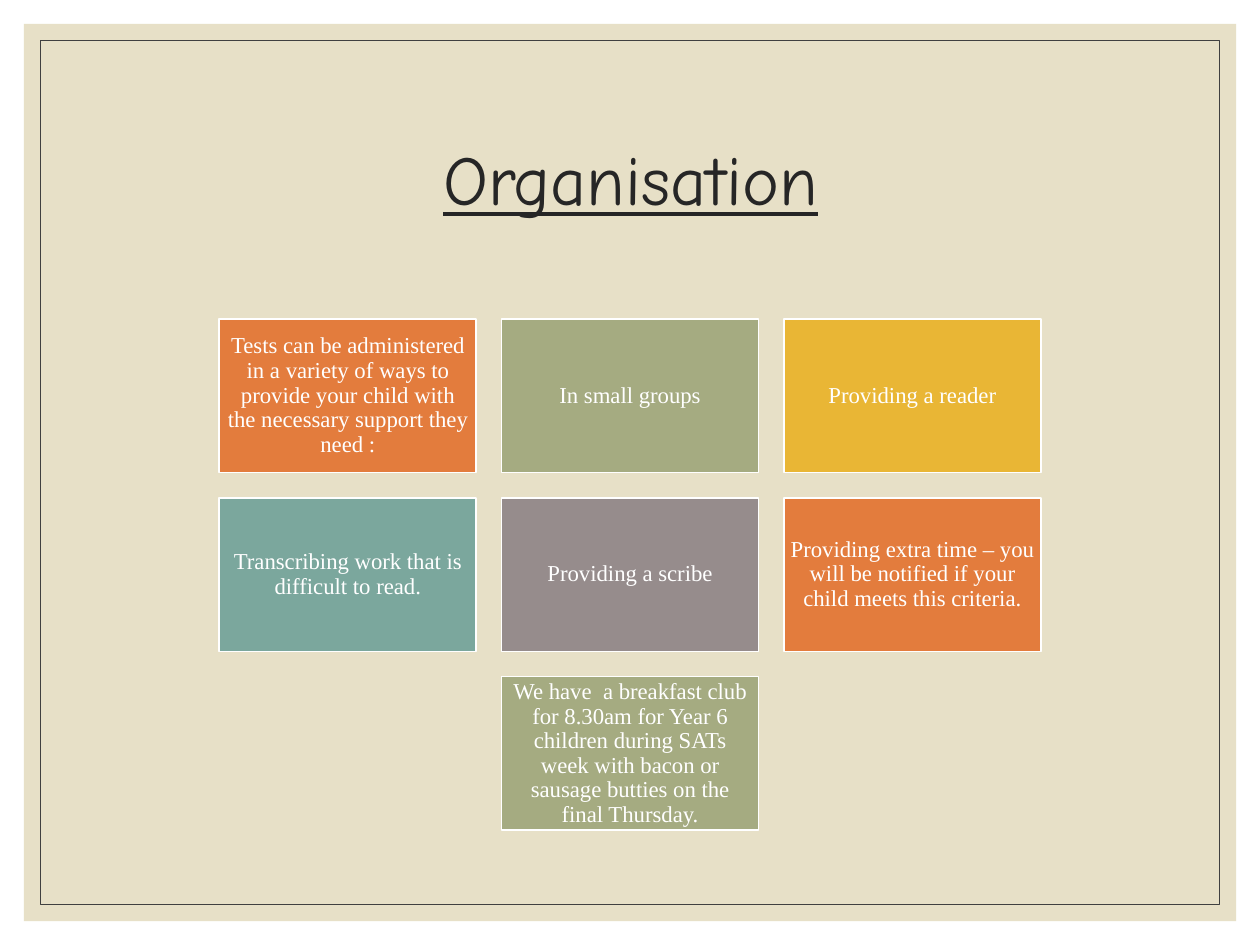
from pptx import Presentation
from pptx.dml.color import RGBColor
from pptx.enum.shapes import MSO_SHAPE
from pptx.enum.text import MSO_ANCHOR, PP_ALIGN
from pptx.util import Inches, Pt


def add_box(left, top, width, height, fill=None, line=None, line_width=1):
    sp = s.shapes.add_shape(MSO_SHAPE.RECTANGLE, Inches(left), Inches(top),
                            Inches(width), Inches(height))
    sp.shadow.inherit = False
    for fmt, color in ((sp.fill, fill), (sp.line.fill, line)):
        if color:
            fmt.solid()
            fmt.fore_color.rgb = RGBColor.from_string(color)
        else:
            fmt.background()
    if line:
        sp.line.width = Pt(line_width)
    return sp


def set_text(sp, text, color, margin, **font):
    """Write one centred paragraph; extra keywords are font attributes."""
    tf = sp.text_frame
    frame = {"word_wrap": True, "vertical_anchor": MSO_ANCHOR.MIDDLE}
    for side in ("left", "right", "top", "bottom"):
        frame[f"margin_{side}"] = Inches(margin)
    for name, value in frame.items():
        setattr(tf, name, value)
    p = tf.paragraphs[0]
    p.alignment = PP_ALIGN.CENTER
    p.line_spacing = 0.9
    r = p.add_run()
    r.text = text
    r.font.color.rgb = RGBColor.from_string(color)
    for name, value in font.items():
        setattr(r.font, name, value)


prs = Presentation()
prs.slide_width, prs.slide_height = Inches(10), Inches(7.5)
s = prs.slides.add_slide(prs.slide_layouts[6])

# Background panel and thin frame
add_box(0.19, 0.19, 9.62, 7.12, fill="E7E0C7")
add_box(0.32, 0.32, 9.36, 6.86, line="404040", line_width=0.5)

title = s.shapes.add_textbox(Inches(0.88), Inches(0.7), Inches(8.25), Inches(1.5))
set_text(title, "Organisation", "262626", 0.05,
         name="Comic Neue", size=Pt(40), underline=True)

# Grid of cards, each row centred on the slide
ORANGE, GREEN, YELLOW, TEAL, GREY = "E37C3D", "A5AB81", "E9B635", "7BA79D", "968C8C"
rows = [
    [("Tests can be administered in a variety of ways to provide your child "
      "with the necessary support they need :", ORANGE),
     ("In small groups", GREEN),
     ("Providing a reader", YELLOW)],
    [("Transcribing work that is difficult to read.", TEAL),
     ("Providing a scribe", GREY),
     ("Providing extra time – you will be notified if your child meets this "
      "criteria.", ORANGE)],
    [("We have  a breakfast club for 8.30am for Year 6 children during SATs "
      "week with bacon or sausage butties on the final Thursday.", GREEN)],
]
card_w, card_h, gap = 2.04, 1.22, 0.2
for i, row in enumerate(rows):
    row_w = len(row) * (card_w + gap) - gap
    for j, (text, color) in enumerate(row):
        card = add_box((10 - row_w) / 2 + j * (card_w + gap),
                       2.53 + i * (card_h + gap), card_w, card_h, color, "FFFFFF")
        set_text(card, text, "FFFFFF", 0.05, name="Times New Roman", size=Pt(13))

prs.save("out.pptx")
